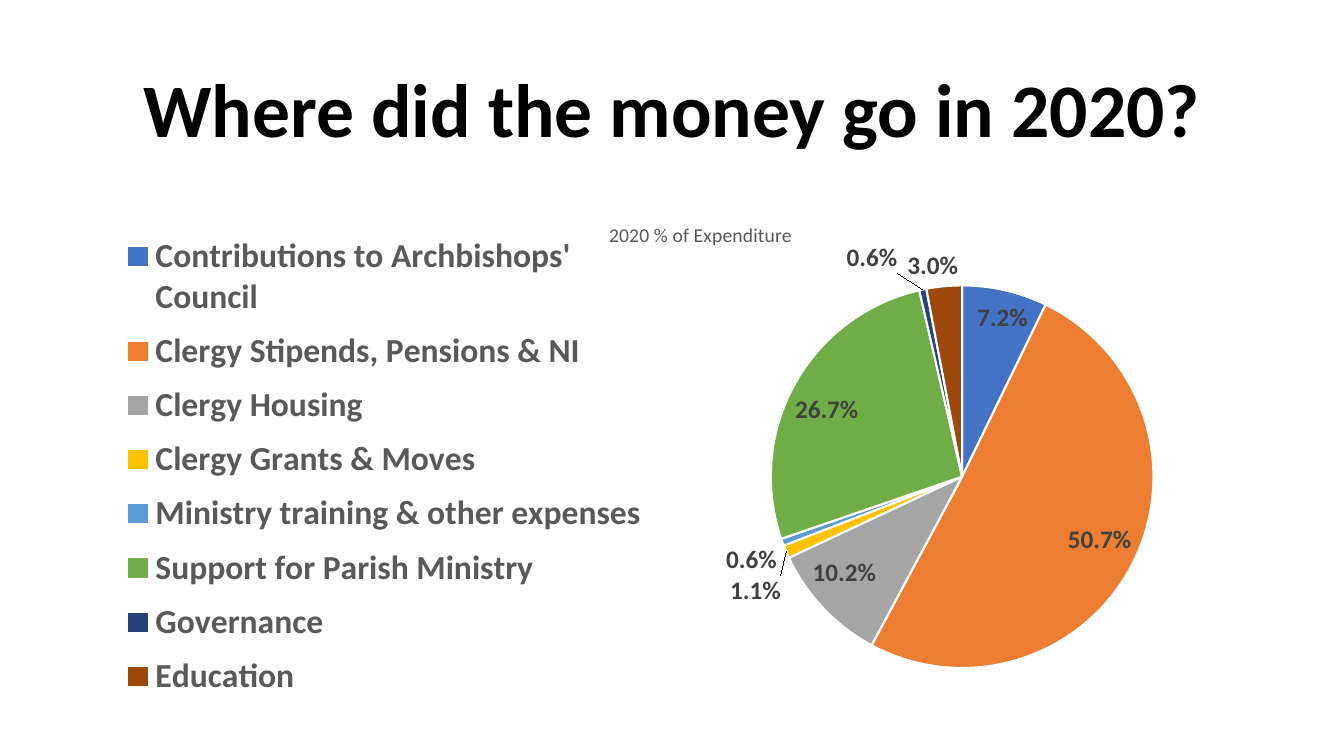
from pptx import Presentation
from pptx.chart.data import CategoryChartData
from pptx.dml.color import RGBColor
from pptx.enum.chart import XL_CHART_TYPE, XL_LABEL_POSITION, XL_LEGEND_POSITION
from pptx.enum.text import MSO_ANCHOR, PP_ALIGN
from pptx.oxml import parse_xml
from pptx.oxml.ns import nsdecls
from pptx.util import Pt

COLORS = {"title": "000000", "text": "595959", "label": "404040", "edge": "FFFFFF"}
CHART_TITLE = "2020 % of Expenditure"
EXPENDITURE = [
    ("Contributions to Archbishops' Council", 0.072, "4472C4"),
    ("Clergy Stipends, Pensions & NI", 0.507, "ED7D31"),
    ("Clergy Housing", 0.102, "A5A5A5"),
    ("Clergy Grants & Moves", 0.011, "FFC000"),
    ("Ministry training & other expenses", 0.006, "5B9BD5"),
    ("Support for Parish Ministry", 0.267, "70AD47"),
    ("Governance", 0.006, "264478"),
    ("Education", 0.03, "9E480E"),
]
LABEL_SHIFTS = {"Clergy Grants & Moves": (0, 0.04), "Governance": (-0.02, -0.02)}


def manual_layout(x, y, size=None, inner=False):
    """Return a c:layout; without a size, x and y are offsets from the automatic place."""
    parts = [("layoutTarget", "inner")] if inner else []
    if size:
        parts += [("xMode", "edge"), ("yMode", "edge")]
    parts += [("x", x), ("y", y)]
    if size:
        parts += zip(("w", "h"), size)
    body = "".join(f'<c:{tag} val="{val}"/>' for tag, val in parts)
    return parse_xml(f'<c:layout {nsdecls("c")}><c:manualLayout>{body}</c:manualLayout></c:layout>')


class Deck:
    font = "Calibri"

    def __init__(self, width, height):
        self.prs = Presentation()
        self.prs.slide_width, self.prs.slide_height = Pt(width), Pt(height)
        self.s = self.prs.slides.add_slide(self.prs.slide_layouts[6])

    def style(self, font, color, **formats):
        for name, value in {"name": self.font, **formats}.items():
            setattr(font, name, value)
        font.color.rgb = RGBColor.from_string(COLORS[color])

    def title(self, text, *box):
        tf = self.s.shapes.add_textbox(*map(Pt, box)).text_frame
        tf.word_wrap, tf.vertical_anchor = True, MSO_ANCHOR.MIDDLE
        p = tf.paragraphs[0]
        p.alignment, p.line_spacing = PP_ALIGN.CENTER, 0.9
        r = p.add_run()
        r.text = text
        self.style(r.font, "title", size=Pt(54), bold=True)

    def pie(self, name, rows, *box):
        data = CategoryChartData(number_format="0.0%")
        data.categories = [row[0] for row in rows]
        data.add_series(name, [row[1] for row in rows])
        chart = self.s.shapes.add_chart(XL_CHART_TYPE.PIE, *map(Pt, box), data).chart
        self.style(chart.font, "title", size=Pt(10))

        p = chart.chart_title.text_frame.paragraphs[0]
        r = p.add_run()
        r.text = name
        self.style(r.font, "text", size=Pt(14), bold=False)

        chart.has_legend = True
        legend = chart.legend
        legend.position, legend.include_in_layout = XL_LEGEND_POSITION.BOTTOM, False
        self.style(legend.font, "text", size=Pt(24), bold=True)
        legend_pos = legend._element.find("{*}legendPos")
        legend_pos.addnext(manual_layout(0.02, 0.04, (0.44, 0.93)))

        plot_area = chart._chartSpace.chart.plotArea
        for old in plot_area.findall("{*}layout"):
            plot_area.remove(old)
        plot_area.insert(0, manual_layout(0.48, 0.16, (0.47, 0.73), inner=True))

        chart.plots[0].vary_by_categories = True
        self.slices(chart.plots[0].series[0], rows)

    def slices(self, series, rows):
        labels = series.data_labels
        labels.show_value, labels.position = True, XL_LABEL_POSITION.BEST_FIT
        labels.number_format, labels.number_format_is_linked = "0.0%", False
        self.style(labels.font, "label", size=Pt(18), bold=True)
        for i, (category, _, color) in enumerate(rows):
            point = series.points[i]
            fmt = point.format
            fmt.fill.solid()
            fmt.fill.fore_color.rgb = RGBColor.from_string(color)
            fmt.line.color.rgb = RGBColor.from_string(COLORS["edge"])
            fmt.line.width = Pt(1.5)
            if category in LABEL_SHIFTS:
                label = point.data_label
                self.style(label.font, "label", size=Pt(18), bold=True)
                label.position = XL_LABEL_POSITION.BEST_FIT
                idx = label._dLbl.find("{*}idx")
                idx.addnext(manual_layout(*LABEL_SHIFTS[category]))


def main():
    deck = Deck(960, 540)
    deck.title("Where did the money go in 2020?", 66, 28.8, 828, 104.4)
    deck.pie(CHART_TITLE, EXPENDITURE, 66, 144, 869, 374.4)
    deck.prs.save("out.pptx")


if __name__ == "__main__":
    main()
